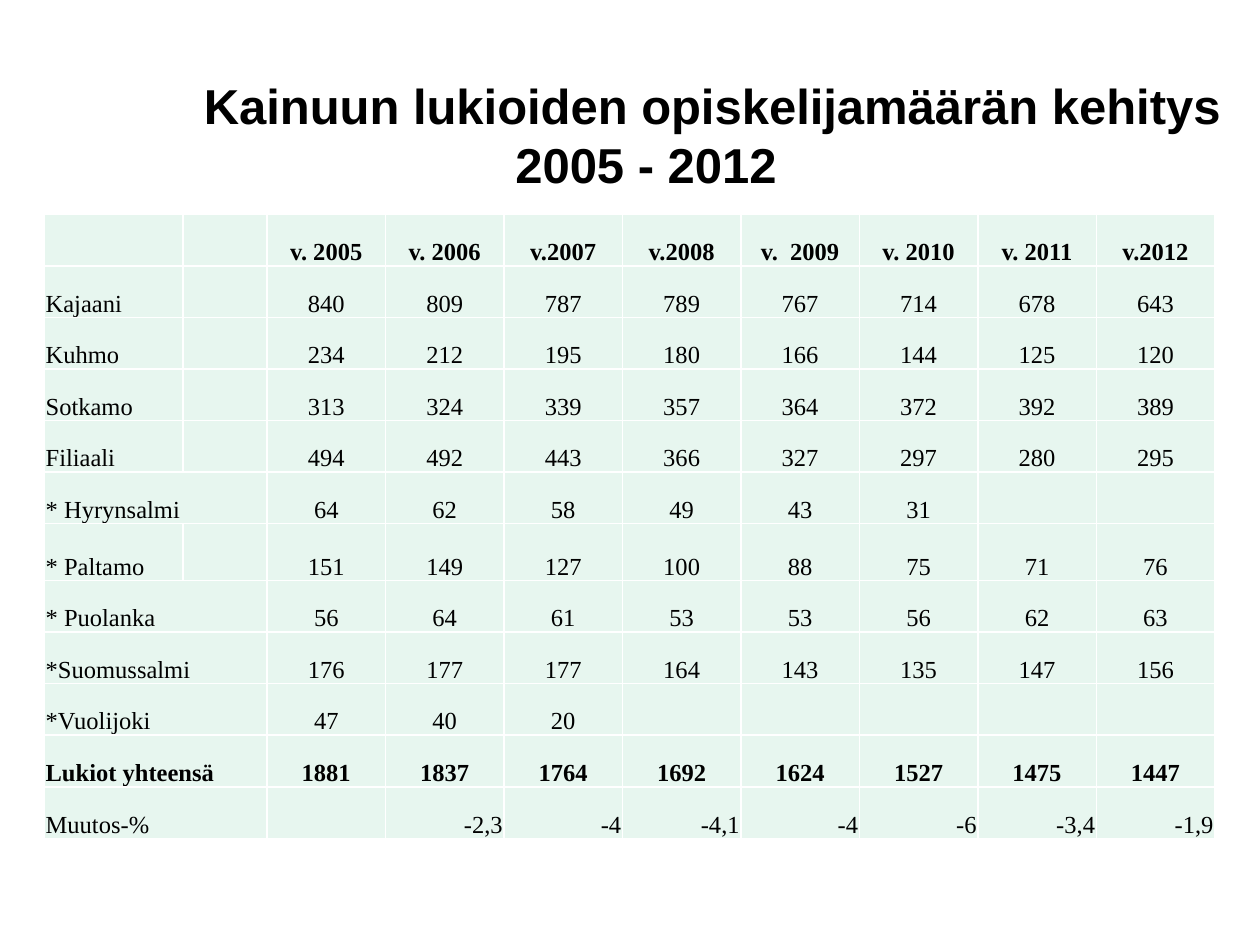
"""Build a slide with a table of student numbers in Kainuu upper secondary schools."""
from lxml import etree
from pptx import Presentation
from pptx.dml.color import RGBColor
from pptx.enum import text as t
from pptx.oxml import ns
from pptx.util import Pt

TITLE = (("Kainuun lukioiden opiskelijamäärän kehitys", 0), ("2005 - 2012", 178))
ROWS = (
    ("", "v. 2005", "v. 2006", "v.2007", "v.2008", "v.  2009", "v. 2010", "v. 2011", "v.2012"),
    ("Kajaani", 840, 809, 787, 789, 767, 714, 678, 643),
    ("Kuhmo", 234, 212, 195, 180, 166, 144, 125, 120),
    ("Sotkamo", 313, 324, 339, 357, 364, 372, 392, 389),
    ("Filiaali", 494, 492, 443, 366, 327, 297, 280, 295),
    ("* Hyrynsalmi", 64, 62, 58, 49, 43, 31, "", ""),
    ("* Paltamo", 151, 149, 127, 100, 88, 75, 71, 76),
    ("* Puolanka", 56, 64, 61, 53, 53, 56, 62, 63),
    ("*Suomussalmi", 176, 177, 177, 164, 143, 135, 147, 156),
    ("*Vuolijoki", 47, 40, 20, "", "", "", "", ""),
    ("Lukiot yhteensä", 1881, 1837, 1764, 1692, 1624, 1527, 1475, 1447),
    ("Muutos-%", "", "-2,3", "-4", "-4,1", "-4", "-6", "-3,4", "-1,9"),
)
BOLD = (0, 10)
MERGED = (5, 7, 8, 9, 10, 11)
LAST = len(ROWS) - 1
WIDTHS = [79.2, 48] + [67.7] * 8
HEIGHTS = [32.4 if r == 6 else 29.5 for r in range(len(ROWS))]
CELL = {
    "vertical_anchor": t.MSO_ANCHOR.BOTTOM,
    "margin_left": Pt(0.7), "margin_right": Pt(0.7),
    "margin_top": Pt(0.7), "margin_bottom": Pt(0),
}
FRAME = {"word_wrap": True, "auto_size": t.MSO_AUTO_SIZE.NONE}


def color(code):
    return RGBColor.from_string(code)


def assign(item, values):
    for key, value in values.items():
        setattr(item, key, value)


def style(para, name, size, bold):
    assign(para.font, {"name": name, "size": Pt(size), "bold": bold})
    para.font.color.rgb = color("000000")


def border(cell):
    props = cell._tc.get_or_add_tcPr()
    for spot, side in enumerate(("lnL", "lnR", "lnT", "lnB")):
        line = etree.Element(ns.qn("a:" + side), w=str(Pt(1)))
        fill = etree.SubElement(line, ns.qn("a:solidFill"))
        etree.SubElement(fill, ns.qn("a:srgbClr"), val="FFFFFF")
        props.insert(spot, line)


def add_grid(slide):
    grid = slide.shapes.add_table(
        len(ROWS), len(WIDTHS), Pt(25.4), Pt(122.4), Pt(sum(WIDTHS)), Pt(sum(HEIGHTS))
    ).table
    for col, width in zip(grid.columns, WIDTHS):
        col.width = Pt(width)
    for r, (name, *nums) in enumerate(ROWS):
        grid.rows[r].height = Pt(HEIGHTS[r])
        for c, value in enumerate([name, ""] + nums):
            cell = grid.cell(r, c)
            assign(cell, CELL)
            cell.fill.solid()
            cell.fill.fore_color.rgb = color("E7F6EF")
            border(cell)
            cell.text = str(value)
            para = cell.text_frame.paragraphs[0]
            style(para, "Times New Roman", 14, r in BOLD)
            if c > 1:
                para.alignment = t.PP_ALIGN.RIGHT if r == LAST else t.PP_ALIGN.CENTER
        if r in MERGED:
            grid.cell(r, 0).merge(grid.cell(r, 1))


def add_title(slide):
    frame = slide.shapes.add_textbox(Pt(109.4), Pt(39.6), Pt(610.6), Pt(74.9)).text_frame
    assign(frame, FRAME)
    for i, (line, indent) in enumerate(TITLE):
        para = frame.add_paragraph() if i else frame.paragraphs[0]
        para.text = line
        para._p.get_or_add_pPr().set("marL", str(Pt(indent)))
        style(para, "Arial", 28, True)


def main():
    deck = Presentation()
    assign(deck, {"slide_width": Pt(720), "slide_height": Pt(540)})
    slide = deck.slides.add_slide(deck.slide_layouts[6])
    add_grid(slide)
    add_title(slide)
    deck.save("out.pptx")


if __name__ == "__main__":
    main()
